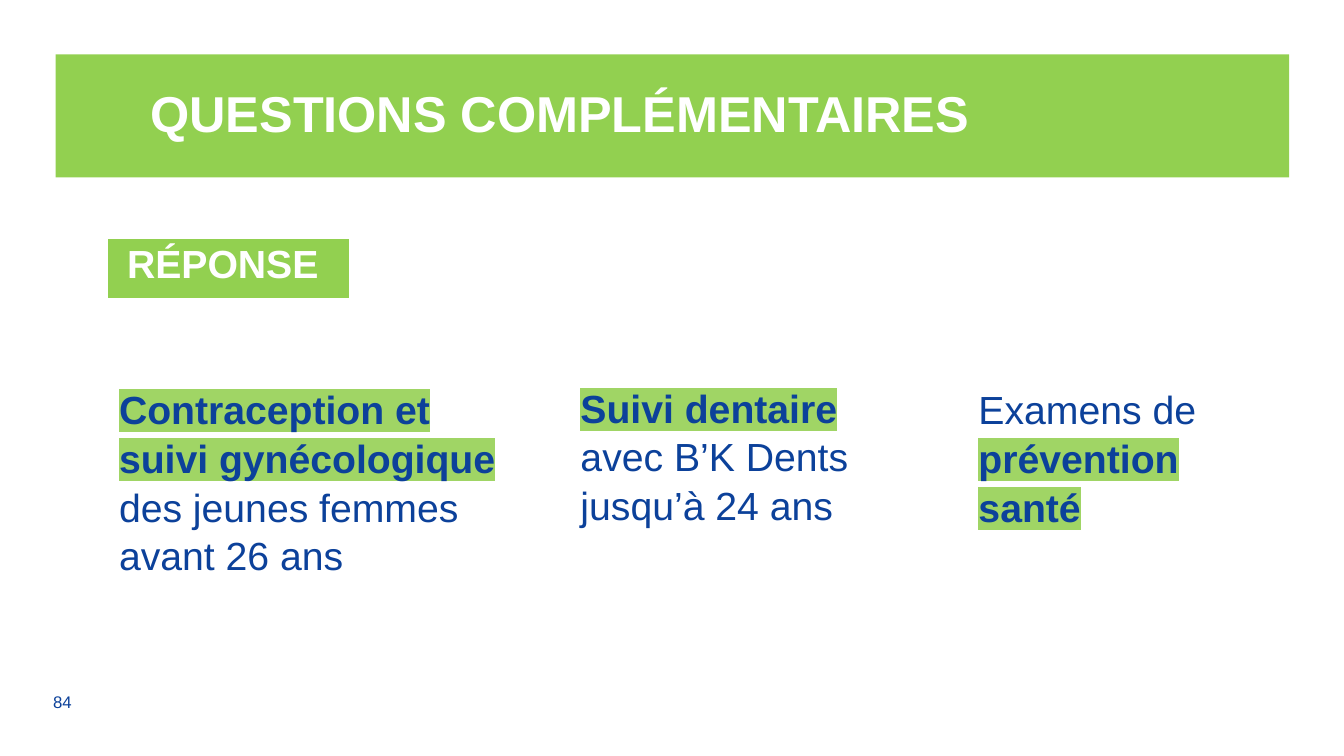
from dataclasses import dataclass

from lxml import etree
from pptx import Presentation
from pptx.dml.color import RGBColor
from pptx.enum import text as t
from pptx.oxml import ns
from pptx.util import Cm, Pt


@dataclass(frozen=True)
class Theme:
    """Colours, type sizes and font of the slide."""
    font: str = "Arial"
    green: str = "92D050"
    mark: str = "A0D565"
    blue: str = "0C419A"
    white: str = "FFFFFF"
    head: int = 36
    body: int = 28
    small: int = 12


THEME = Theme()
COLUMNS = [
    ((2.11, 9.53, 11, 6.2), [("Contraception et suivi gynécologique", True),
                             (" des jeunes femmes avant 26 ans", False)]),
    ((13.74, 9.5, 8.26, 6.2), [("Suivi dentaire ", True),
                               ("avec B’K Dents jusqu’à 24 ans", False)]),
    ((23.77, 9.53, 8.71, 3.58), [("Examens de ", False),
                                 ("prévention santé", True)]),
]


def place(box):
    """Turn centimetres into lengths."""
    return [Cm(n) for n in box]


def paint(fill, color):
    """Give a fill one solid colour."""
    fill.solid()
    fill.fore_color.rgb = RGBColor.from_string(color)


def write(para, words, size, color, bold=False):
    """Add one styled run to a paragraph."""
    run = para.add_run()
    run.text = words
    font = run.font
    font.name, font.size, font.bold = THEME.font, Pt(size), bold
    paint(font.fill, color)
    return run


def mark(run):
    """Highlight a run."""
    light = etree.Element(ns.qn("a:highlight"))
    etree.SubElement(light, ns.qn("a:srgbClr"), val=THEME.mark)
    run.font._element.find(ns.qn("a:solidFill")).addnext(light)


def edge(cell, side, width):
    """Draw one white border of a cell."""
    line = etree.SubElement(cell._tc.get_or_add_tcPr(), ns.qn(f"a:ln{side}"), w=str(Pt(width)))
    fill = etree.SubElement(line, ns.qn("a:solidFill"))
    etree.SubElement(fill, ns.qn("a:srgbClr"), val=THEME.white)


def add_title(slide, words, box):
    """Format the title placeholder as a green banner."""
    title = slide.shapes.title
    title.left, title.top, title.width, title.height = place(box)
    paint(title.fill, THEME.green)
    frame = title.text_frame
    frame.vertical_anchor = t.MSO_ANCHOR.MIDDLE
    frame.margin_left = Cm(2.39)
    frame.margin_right = frame.margin_top = frame.margin_bottom = Cm(0.2)
    para = frame.paragraphs[0]
    para.alignment, para.line_spacing = t.PP_ALIGN.LEFT, 0.9
    write(para, words, THEME.head, THEME.white, True)


def add_label(slide, words, box):
    """Add the one-cell table that labels the answer."""
    table = slide.shapes.add_table(1, 1, *place(box)).table
    cell = table.cell(0, 0)
    for side, width in zip("LRTB", (1, 1, 1, 3)):
        edge(cell, side, width)
    paint(cell.fill, THEME.green)
    para = cell.text_frame.paragraphs[0]
    para.alignment = t.PP_ALIGN.CENTER
    write(para, words, THEME.body, THEME.white, True)


def add_text(slide, box):
    """Add a wrapping text box and return its frame."""
    frame = slide.shapes.add_textbox(*place(box)).text_frame
    frame.word_wrap = True
    return frame


def add_column(slide, box, parts):
    """Add an indented text whose key words are bold and highlighted."""
    para = add_text(slide, box).paragraphs[0]
    para.space_before, para.line_spacing = Pt(6), 1.04
    props = para._p.get_or_add_pPr()
    props.set("marL", str(Cm(0.64)))
    props.set("indent", "0")
    for words, key in parts:
        run = write(para, words, THEME.body, THEME.blue, key)
        if key:
            mark(run)


def add_number(slide, words, box):
    """Add the page number."""
    frame = add_text(slide, box)
    frame.vertical_anchor = t.MSO_ANCHOR.MIDDLE
    write(frame.paragraphs[0], words, THEME.small, THEME.blue)


def main():
    """Build and save the slide."""
    deck = Presentation()
    deck.slide_width, deck.slide_height = Cm(33.87), Cm(19.05)
    slide = deck.slides.add_slide(deck.slide_layouts[5])
    add_number(slide, "84", (1.09, 17.3, 2, 0.79))
    add_title(slide, "QUESTIONS COMPLÉMENTAIRES", (1.4, 1.37, 31.09, 3.1))
    for box, parts in COLUMNS:
        add_column(slide, box, parts)
    add_label(slide, "RÉPONSE ", (2.7, 6, 6.1, 1.55))
    deck.save("out.pptx")


if __name__ == "__main__":
    main()
